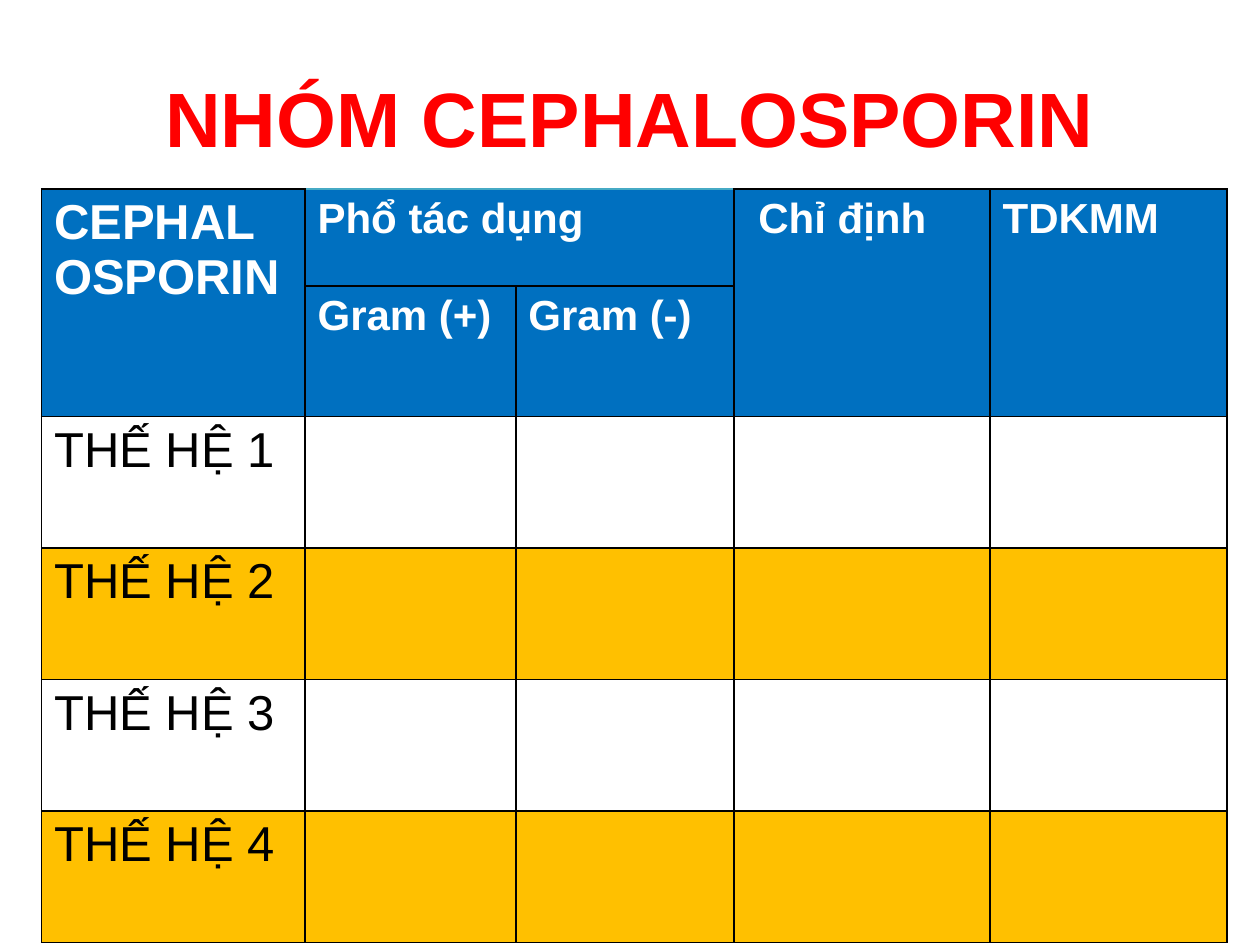
"""Build the cephalosporin table slide."""
import pptx
import pptx.util
import pptx.dml.color
import pptx.enum.text
from lxml import etree

Cm, Pt = pptx.util.Cm, pptx.util.Pt
NS = "http://schemas.openxmlformats.org/drawingml/2006/main"


def tint(code):
    """Turn a hex string into a colour."""
    return pptx.dml.color.RGBColor.from_string(code)


def write(frame, text, size, color, bold):
    """Put one styled line of text in a frame."""
    line = frame.paragraphs[0]
    line.text = text
    line.font.name = "Arial"
    line.font.size = Pt(size)
    line.font.bold = bold
    line.font.color.rgb = tint(color)
    return line


deck = pptx.Presentation()
deck.slide_width, deck.slide_height = Cm(25.4), Cm(19.05)
slide = deck.slides.add_slide(deck.slide_layouts[6])

title = slide.shapes.add_textbox(Cm(1.27), Cm(0.76), Cm(22.86), Cm(3.18)).text_frame
title.word_wrap = True
title.vertical_anchor = pptx.enum.text.MSO_ANCHOR.MIDDLE
line = write(title, "NHÓM CEPHALOSPORIN", 44, "FF0000", True)
line.alignment = pptx.enum.text.PP_ALIGN.CENTER

wide = [5.31, 4.25, 4.4, 5.16, 4.78]
high = [1.96, 2.03] + [2.65] * 4
table = slide.shapes.add_table(
    len(high), len(wide), Cm(0.84), Cm(3.81), Cm(sum(wide)), Cm(sum(high))
).table
table.first_row = table.horz_banding = False
for col, size in zip(table.columns, wide):
    col.width = Cm(size)
for row, size in zip(table.rows, high):
    row.height = Cm(size)

for r in range(len(high)):
    for c in range(len(wide)):
        cell = table.cell(r, c)
        if r < 2 or r % 2:
            cell.fill.solid()
            cell.fill.fore_color.rgb = tint("0070C0" if r < 2 else "FFC000")
        else:
            cell.fill.background()
        props = cell._tc.get_or_add_tcPr()
        for i, side in enumerate("LRTB"):
            pale = side == "T" and r == 0 and c in (1, 2)
            edge = etree.Element(f"{{{NS}}}ln{side}", w=str(Pt(0.75 if pale else 1)))
            fill = etree.SubElement(edge, f"{{{NS}}}solidFill")
            etree.SubElement(fill, f"{{{NS}}}srgbClr", val="46AAC5" if pale else "000000")
            props.insert(i, edge)

for c in (0, 3, 4):
    table.cell(0, c).merge(table.cell(1, c))
table.cell(0, 1).merge(table.cell(0, 2))

heads = [
    (0, 0, "CEPHALOSPORIN", 28),
    (0, 1, "Phổ tác dụng", 24),
    (0, 3, " Chỉ định", 24),
    (0, 4, "TDKMM", 24),
    (1, 1, "Gram (+)", 24),
    (1, 2, "Gram (-)", 24),
]
for r, c, text, size in heads:
    write(table.cell(r, c).text_frame, text, size, "FFFFFF", True)
for n in range(1, 5):
    write(table.cell(n + 1, 0).text_frame, f"THẾ HỆ {n}", 28, "000000", False)

deck.save("out.pptx")
